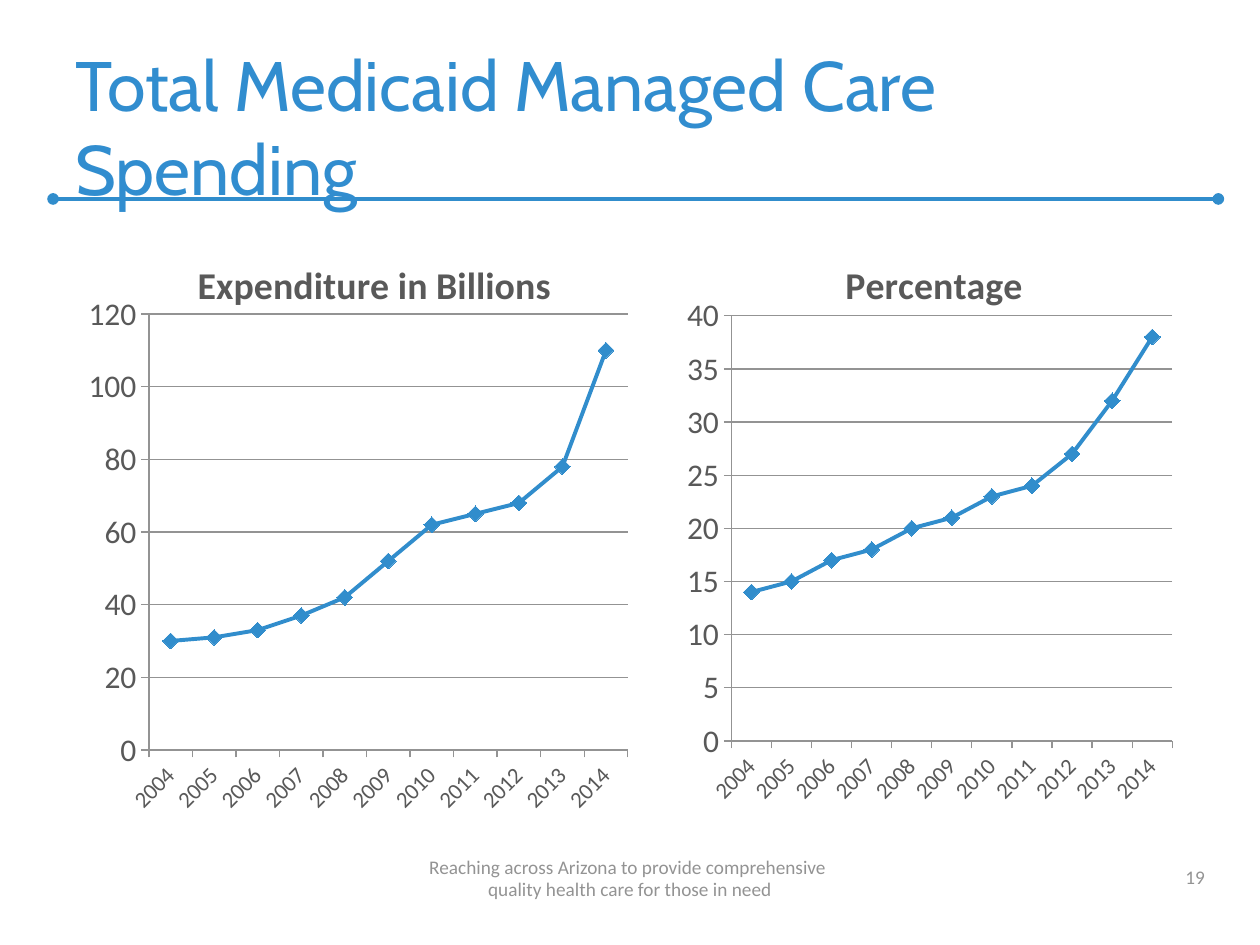
from dataclasses import dataclass

from lxml import etree
from pptx import Presentation
from pptx import util as u
from pptx.chart.data import CategoryChartData
from pptx.dml.color import RGBColor
from pptx.enum import chart as ch, shapes, text
from pptx.oxml import parse_xml
from pptx.oxml.ns import nsdecls, qn

COLORS = {"title": "318DCF", "accent": "318DCC", "label": "595959",
          "axis": "939393", "footer": "939393"}
YEARS = [str(year) for year in range(2004, 2015)]


@dataclass
class Box:
    left: float
    top: float
    width: float
    height: float

    def lengths(self) -> list[u.Cm]:
        return [u.Cm(v) for v in (self.left, self.top, self.width, self.height)]


@dataclass
class Trend:
    title: str
    values: list[int]
    box: Box
    plot: Box  # fractions of the chart area
    title_at: tuple[float, float]


@dataclass
class Caption:
    words: str
    box: Box
    size: float
    color: str
    font: str = "Calibri"
    align: text.PP_ALIGN = text.PP_ALIGN.LEFT
    bottom_inset: float = 0.13
    spacing: float | None = None


TRENDS = [
    Trend("Expenditure in Billions", [30, 31, 33, 37, 42, 52, 62, 65, 68, 78, 110],
          Box(1.07, 4.45, 12.07, 12.14), Box(0.16, 0.155, 0.8, 0.724), (0.23, 0.05)),
    Trend("Percentage", [14, 15, 17, 18, 20, 21, 23, 24, 27, 32, 38],
          Box(13.34, 4.45, 10.8, 12.37), Box(0.13, 0.155, 0.823, 0.693), (0.33, 0.05)),
]
CAPTIONS = [
    Caption("Total Medicaid Managed Care Spending", Box(1.27, 0.84, 23.06, 3.38),
            40, "title", "Cabin", bottom_inset=0),
    Caption("19", Box(18.62, 17.22, 5.92, 0.81), 11, "footer",
            align=text.PP_ALIGN.RIGHT),
    Caption("Reaching across Arizona to provide comprehensive \v"
            "quality health care for those in need", Box(0, 17.22, 25.4, 1.07),
            11, "footer", align=text.PP_ALIGN.CENTER, spacing=13),
]


def rgb(name: str) -> RGBColor:
    return RGBColor.from_string(COLORS[name])


def add_caption(slide, caption: Caption) -> None:
    frame = slide.shapes.add_textbox(*caption.box.lengths()).text_frame
    frame.word_wrap = True
    frame.vertical_anchor = text.MSO_ANCHOR.BOTTOM
    frame.margin_bottom = u.Cm(caption.bottom_inset)
    paragraph = frame.paragraphs[0]
    paragraph.text = caption.words
    paragraph.alignment = caption.align
    if caption.spacing:
        paragraph.line_spacing = u.Pt(caption.spacing)
    for run in paragraph.runs:
        run.font.name = caption.font
        run.font.size = u.Pt(caption.size)
        run.font.color.rgb = rgb(caption.color)


def add_rule(slide) -> None:
    y = u.Cm(4.01)
    rule = slide.shapes.add_connector(shapes.MSO_CONNECTOR.STRAIGHT,
                                      u.Cm(1.07), y, u.Cm(24.56), y)
    rule.line.color.rgb = rgb("accent")
    rule.line.width = u.Pt(2.25)
    outline = rule.line._get_or_add_ln()
    for end in ("a:headEnd", "a:tailEnd"):
        etree.SubElement(outline, qn(end), type="oval")
    etree.SubElement(rule._element.spPr, qn("a:effectLst"))


def manual_layout(fractions: dict[str, float], inner: bool = False):
    target = '<c:layoutTarget val="inner"/>' if inner else ""
    modes = "".join(f'<c:{k}Mode val="edge"/>' for k in ("x", "y"))
    sizes = "".join(f'<c:{k} val="{v}"/>' for k, v in fractions.items())
    return parse_xml(f"<c:layout {nsdecls('c')}><c:manualLayout>{target}{modes}{sizes}"
                     "</c:manualLayout></c:layout>")


def place(parent, layout) -> None:
    for old in parent.findall(qn("c:layout")):
        parent.remove(old)
    text_part = parent.find(qn("c:tx"))
    parent.insert(0 if text_part is None else 1, layout)


def add_trend(slide, trend: Trend) -> None:
    data = CategoryChartData()
    data.categories = YEARS
    data.add_series(trend.title, trend.values)
    chart = slide.shapes.add_chart(ch.XL_CHART_TYPE.LINE_MARKERS,
                                   *trend.box.lengths(), data).chart
    chart.has_legend = False
    chart.font.name = "Calibri"
    chart.font.size = u.Pt(18)
    chart.font.color.rgb = rgb("label")

    # Heading and plot area
    chart.has_title = True
    heading = chart.chart_title.text_frame
    heading.text = trend.title
    font = heading.paragraphs[0].runs[0].font
    font.name, font.size, font.bold = "Calibri", u.Pt(21.6), True
    font.color.rgb = rgb("label")
    place(chart.chart_title._element, manual_layout(dict(zip("xy", trend.title_at))))
    plot = trend.plot
    place(chart._chartSpace.chart.plotArea,
          manual_layout({"x": plot.left, "y": plot.top,
                         "w": plot.width, "h": plot.height}, inner=True))

    # Axes
    years, amounts = chart.category_axis, chart.value_axis
    amounts.has_major_gridlines = True
    amounts.minimum_scale = 0
    for axis in (years, amounts):
        axis.major_tick_mark = ch.XL_TICK_MARK.OUTSIDE
    for line in (years.format.line, amounts.format.line,
                 amounts.major_gridlines.format.line):
        line.color.rgb = rgb("axis")
        line.width = u.Pt(0.75)
    years.tick_labels.font.size = u.Pt(13)
    years._element.find(qn("c:txPr")).find(qn("a:bodyPr")).set("rot", "-2700000")

    # Line and markers
    chart.plots[0].vary_by_categories = False
    series = chart.plots[0].series[0]
    series.smooth = False
    series.format.line.color.rgb = rgb("accent")
    series.format.line.width = u.Pt(2.25)
    series.marker.style = ch.XL_MARKER_STYLE.DIAMOND
    series.marker.size = 9
    series.marker.format.fill.solid()
    series.marker.format.fill.fore_color.rgb = rgb("accent")
    series.marker.format.line.color.rgb = rgb("accent")


def main() -> None:
    deck = Presentation()
    deck.slide_width, deck.slide_height = u.Cm(25.4), u.Cm(19.05)
    slide = deck.slides.add_slide(deck.slide_layouts[6])
    add_rule(slide)
    for caption in CAPTIONS:
        add_caption(slide, caption)
    for trend in TRENDS:
        add_trend(slide, trend)
    deck.save("out.pptx")


if __name__ == "__main__":
    main()
